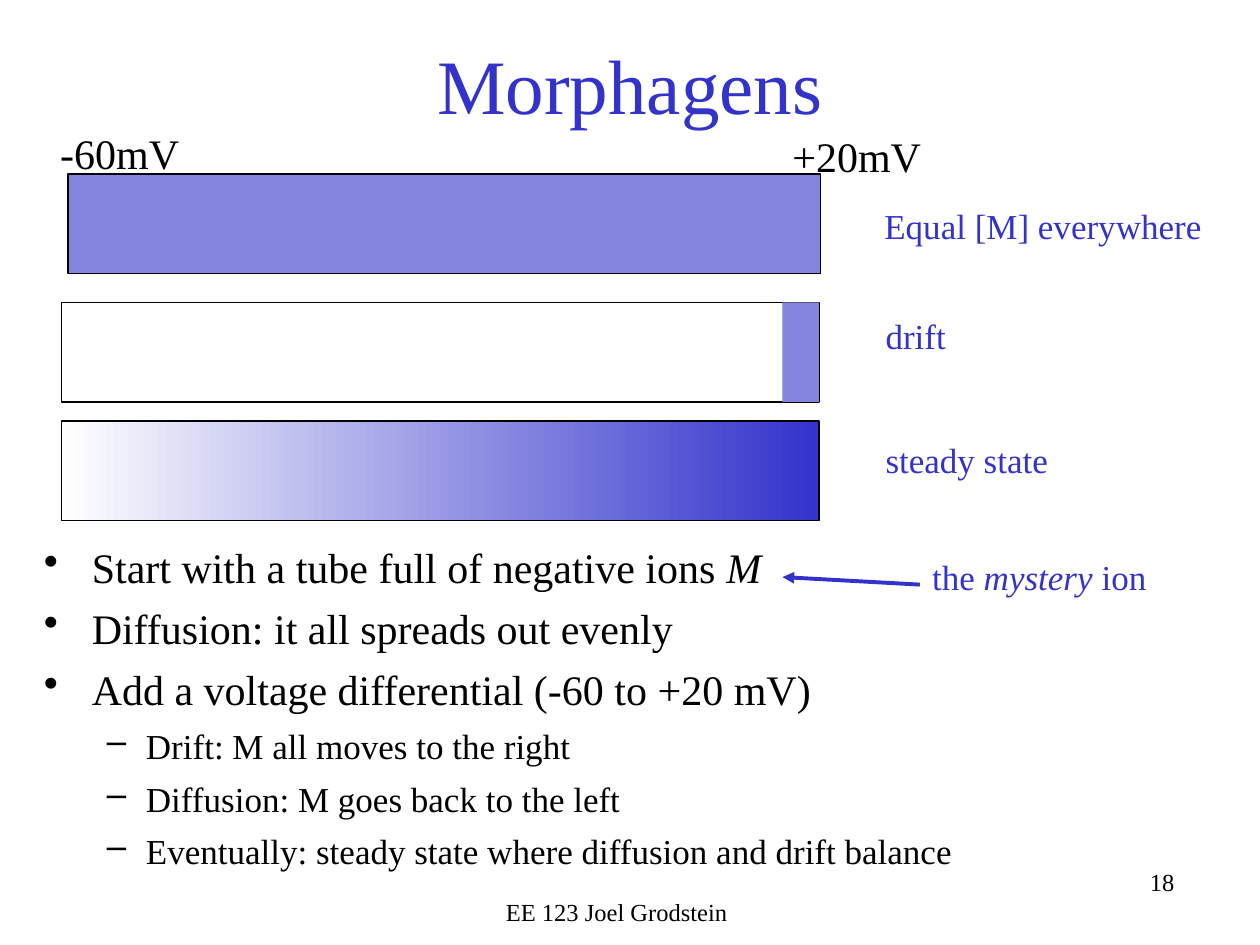
from dataclasses import dataclass

from lxml import etree
from pptx import Presentation
from pptx import util as u
from pptx.dml.color import RGBColor
from pptx.enum import shapes, text
from pptx.oxml.ns import qn


@dataclass
class Theme:
    font: str = "Times New Roman"
    ink: str = "000000"
    blue: str = "3333CC"
    pale: str = "8585E0"
    white: str = "FFFFFF"
    title: int = 44
    large: int = 24
    mid: int = 20
    small: int = 14


def rgb(code):
    return RGBColor.from_string(code)


class Deck:
    """Holds the theme and the current slide."""

    def __init__(self, theme):
        self.theme = theme
        self.prs = Presentation()
        self.prs.slide_width, self.prs.slide_height = u.Inches(10), u.Inches(7.5)
        self.slide = self.prs.slides.add_slide(self.prs.slide_layouts[5])

    def fill_in(self, para, runs, size, color):
        """Add (words, italic) runs to a paragraph."""
        for words, slant in runs:
            run = para.add_run()
            run.text = words
            run.font.name = self.theme.font
            run.font.size = u.Pt(size)
            run.font.italic = slant
            run.font.color.rgb = rgb(color)

    def title(self, words, box):
        shape = self.slide.shapes.title
        shape.left, shape.top, shape.width, shape.height = map(u.Inches, box)
        frame = shape.text_frame
        frame.vertical_anchor = text.MSO_ANCHOR.MIDDLE
        para = frame.paragraphs[0]
        para.alignment = text.PP_ALIGN.CENTER
        self.fill_in(para, [(words, False)], self.theme.title, self.theme.blue)

    def label(self, runs, box, size, color, align=text.PP_ALIGN.LEFT, wrap=False):
        frame = self.slide.shapes.add_textbox(*map(u.Inches, box)).text_frame
        frame.word_wrap = wrap
        para = frame.paragraphs[0]
        para.alignment = align
        self.fill_in(para, runs, size, color)

    def bullets(self, items, box):
        """Add a two-level list of (level, runs) items."""
        styles = [("•", 0.38, 0.38, self.theme.large),
                  ("–", 0.81, 0.31, self.theme.mid)]
        frame = self.slide.shapes.add_textbox(*map(u.Inches, box)).text_frame
        frame.word_wrap = True
        for i, (level, runs) in enumerate(items):
            mark, left, hang, size = styles[level]
            para = frame.add_paragraph() if i else frame.paragraphs[0]
            para.level = level
            para.space_before = u.Pt(6)
            self.fill_in(para, runs, size, self.theme.ink)
            props = para._p.get_or_add_pPr()
            props.set("marL", str(u.Inches(left)))
            props.set("indent", str(-u.Inches(hang)))
            etree.SubElement(props, qn("a:buChar")).set("char", mark)

    def bar(self, box, fill=None, line=True):
        """Add a bar; fill is None, one colour or a pair for a gradient."""
        shape = self.slide.shapes.add_shape(
            shapes.MSO_SHAPE.RECTANGLE, *map(u.Inches, box))
        shape.shadow.inherit = False
        if fill is None:
            shape.fill.background()
        elif isinstance(fill, tuple):
            shape.fill.gradient()
            shape.fill.gradient_angle = 0
            for stop, code in zip(shape.fill.gradient_stops, fill):
                stop.color.rgb = rgb(code)
        else:
            shape.fill.solid()
            shape.fill.fore_color.rgb = rgb(fill)
        if line:
            shape.line.color.rgb = rgb(self.theme.ink)
            shape.line.width = u.Pt(0.75)
        else:
            shape.line.fill.background()

    def arrow(self, start, end):
        link = self.slide.shapes.add_connector(
            shapes.MSO_CONNECTOR.STRAIGHT, *map(u.Inches, start + end))
        link.line.color.rgb = rgb(self.theme.blue)
        link.line.width = u.Pt(2.25)
        props = link._element.spPr
        tip = etree.SubElement(props.find(qn("a:ln")), qn("a:tailEnd"))
        tip.set("type", "triangle")
        etree.SubElement(props, qn("a:effectLst"))


def main():
    th = Theme()
    deck = Deck(th)
    deck.title("Morphagens", (0.75, 0.28, 8.5, 0.77))

    # Explanation
    deck.bullets([
        (0, [("Start with a tube full of negative ions ", False), ("M", True)]),
        (0, [("Diffusion: it all spreads out evenly", False)]),
        (0, [("Add a voltage differential (-60 to +20 mV)", False)]),
        (1, [("Drift: M all moves to the right", False)]),
        (1, [("Diffusion: M goes back to the left", False)]),
        (1, [("Eventually: steady state where diffusion and drift balance", False)]),
    ], (0.25, 4.25, 9.62, 2.81))

    # Tubes: even, drifted to the right end, steady state
    left, wide, high, end = 0.49, 6.01, 0.79, 0.29
    deck.bar((0.54, 1.38, 5.97, high), th.pale)
    deck.bar((left, 2.4, wide, high))
    deck.bar((left + wide - end, 2.4, end, high), th.pale, line=False)
    deck.bar((left, 3.34, wide, high), (th.white, th.blue))

    # Voltages at the tube ends
    for words, x, y, w in [("-60mV", 0.38, 0.96, 1.36), ("+20mV", 6.19, 0.99, 1.22)]:
        deck.label([(words, False)], (x, y, w, 0.5), th.large, th.ink)

    # Tube names
    for words, x, y, w in [("Equal [M] everywhere", 6.92, 1.57, 2.78),
                           ("drift", 6.93, 2.45, 0.76),
                           ("steady state", 6.93, 3.43, 1.57)]:
        deck.label([(words, False)], (x, y, w, 0.44), th.mid, th.blue)

    # Note on the ion
    deck.label([("the ", False), ("mystery", True), (" ion", False)],
               (7.3, 4.36, 1.9, 0.44), th.mid, th.blue)
    deck.arrow((7.3, 4.64), (6.21, 4.58))

    # Footer and page number
    deck.label([("EE 123 Joel Grodstein", False)], (3.31, 7.07, 3.17, 0.34),
               th.small, th.ink, text.PP_ALIGN.CENTER, True)
    deck.label([("18", False)], (6.25, 6.83, 3.17, 0.5),
               th.small, th.ink, text.PP_ALIGN.RIGHT, True)

    deck.prs.save("out.pptx")


if __name__ == "__main__":
    main()
